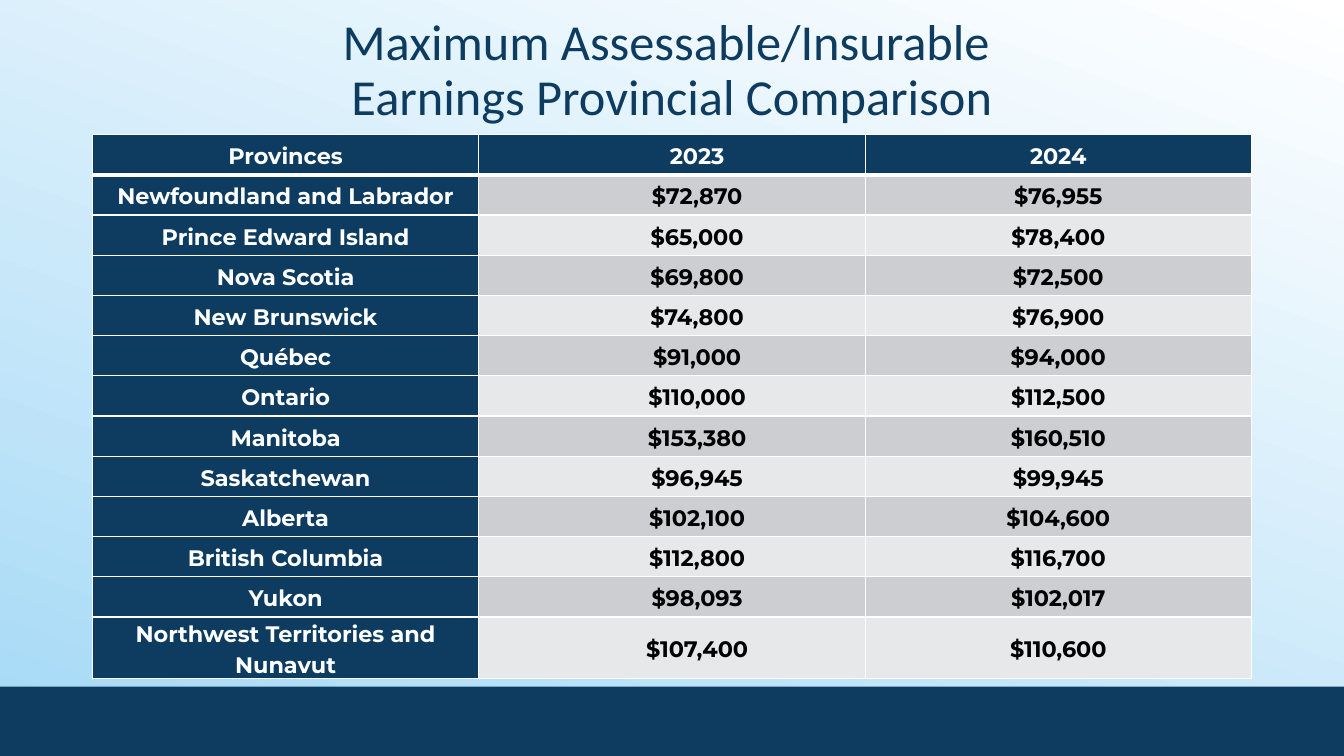
from dataclasses import astuple, dataclass

from lxml.etree import SubElement
from pptx import Presentation
from pptx.dml.color import RGBColor
from pptx.enum.shapes import MSO_SHAPE
from pptx.enum.text import MSO_ANCHOR, PP_ALIGN
from pptx.oxml.ns import qn
from pptx.slide import Slide
from pptx.table import _Cell
from pptx.util import Cm, Pt

NAVY = "0D3C60"
WHITE = "FFFFFF"
BLACK = "000000"
SKY = "A5D9F6"
BANDS = ("CCCED2", "E7E8EA")


@dataclass(frozen=True)
class Earnings:
    province: str
    year_2023: str
    year_2024: str


HEADINGS = Earnings(" Provinces ", "2023", "2024")
PROVINCES = [
    Earnings("Newfoundland and Labrador", "$72,870", "$76,955"),
    Earnings("Prince Edward Island", "$65,000", "$78,400"),
    Earnings("Nova Scotia", "$69,800", "$72,500"),
    Earnings("New Brunswick", "$74,800", "$76,900"),
    Earnings("Québec", "$91,000", "$94,000"),
    Earnings("Ontario", "$110,000", "$112,500"),
    Earnings("Manitoba", "$153,380", "$160,510"),
    Earnings("Saskatchewan", "$96,945", "$99,945"),
    Earnings("Alberta", "$102,100", "$104,600"),
    Earnings("British Columbia", "$112,800", "$116,700"),
    Earnings("Yukon", "$98,093", "$102,017"),
    Earnings("Northwest Territories and Nunavut", "$107,400", "$110,600"),
]


def rgb(value: str) -> RGBColor:
    return RGBColor.from_string(value)


def paint_background(slide: Slide) -> None:
    fill = slide.background.fill
    fill.gradient()
    fill.gradient_angle = 70
    for stop, color, position in zip(fill.gradient_stops, (SKY, WHITE), (0, 1)):
        stop.color.rgb = rgb(color)
        stop.position = position


def add_footer_band(slide: Slide) -> None:
    band = slide.shapes.add_shape(
        MSO_SHAPE.RECTANGLE, Cm(0), Cm(17.3), Cm(33.87), Cm(1.75)
    )
    band.shadow.inherit = False
    band.fill.solid()
    band.fill.fore_color.rgb = rgb(NAVY)
    band.line.fill.background()


def add_title(slide: Slide) -> None:
    frame = slide.shapes.add_textbox(Cm(2.33), Cm(0.23), Cm(29.21), Cm(3.15)).text_frame
    frame.word_wrap = True
    frame.vertical_anchor = MSO_ANCHOR.MIDDLE
    frame.text = "Maximum Assessable/Insurable \vEarnings Provincial Comparison"
    heading = frame.paragraphs[0]
    heading.alignment = PP_ALIGN.CENTER
    heading.line_spacing = 0.9
    for run in heading.runs:
        run.font.name = "Calibri"
        run.font.size = Pt(36)
        run.font.color.rgb = rgb(NAVY)


def add_border(cell: _Cell, side: str, width: float) -> None:
    line = SubElement(
        cell._tc.get_or_add_tcPr(), qn(f"a:{side}"), w=str(Pt(width))
    )
    SubElement(SubElement(line, qn("a:solidFill")), qn("a:srgbClr"), val=WHITE)


def format_cell(cell: _Cell, text: str, row: int, column: int) -> None:
    dark = row == 0 or column == 0
    widths = {
        "lnL": 1,
        "lnR": 1,
        "lnT": 3 if row == 1 else 1,
        "lnB": 3 if row == 0 else 1,
    }
    for side, width in widths.items():
        add_border(cell, side, width)
    cell.fill.solid()
    cell.fill.fore_color.rgb = rgb(NAVY if dark else BANDS[(row - 1) % 2])
    cell.vertical_anchor = MSO_ANCHOR.MIDDLE
    cell.margin_left = cell.margin_right = Cm(0)
    cell.margin_top = cell.margin_bottom = Cm(0)
    cell.text_frame.text = text
    entry = cell.text_frame.paragraphs[0]
    entry.alignment = PP_ALIGN.CENTER
    entry.line_spacing = 1.15
    entry.space_after = Pt(8)
    if column == 1:
        entry.level = 1
        properties = entry._p.get_or_add_pPr()
        properties.set("marL", str(Cm(1.27)))
        properties.set("indent", "0")
    font = entry.runs[0].font
    font.name = "Montserrat"
    font.size = Pt(16)
    font.bold = True
    font.color.rgb = rgb(WHITE if dark else BLACK)


def add_earnings_table(slide: Slide) -> None:
    records = [HEADINGS, *PROVINCES]
    earnings = slide.shapes.add_table(
        len(records), 3, Cm(2.33), Cm(3.39), Cm(29.21), Cm(13.18)
    ).table
    for row, record in enumerate(records):
        for column, text in enumerate(astuple(record)):
            format_cell(earnings.cell(row, column), text, row, column)


def main() -> None:
    deck = Presentation()
    deck.slide_width = Cm(33.87)
    deck.slide_height = Cm(19.05)
    slide = deck.slides.add_slide(deck.slide_layouts[6])
    paint_background(slide)
    add_footer_band(slide)
    add_title(slide)
    add_earnings_table(slide)
    deck.save("out.pptx")


if __name__ == "__main__":
    main()
